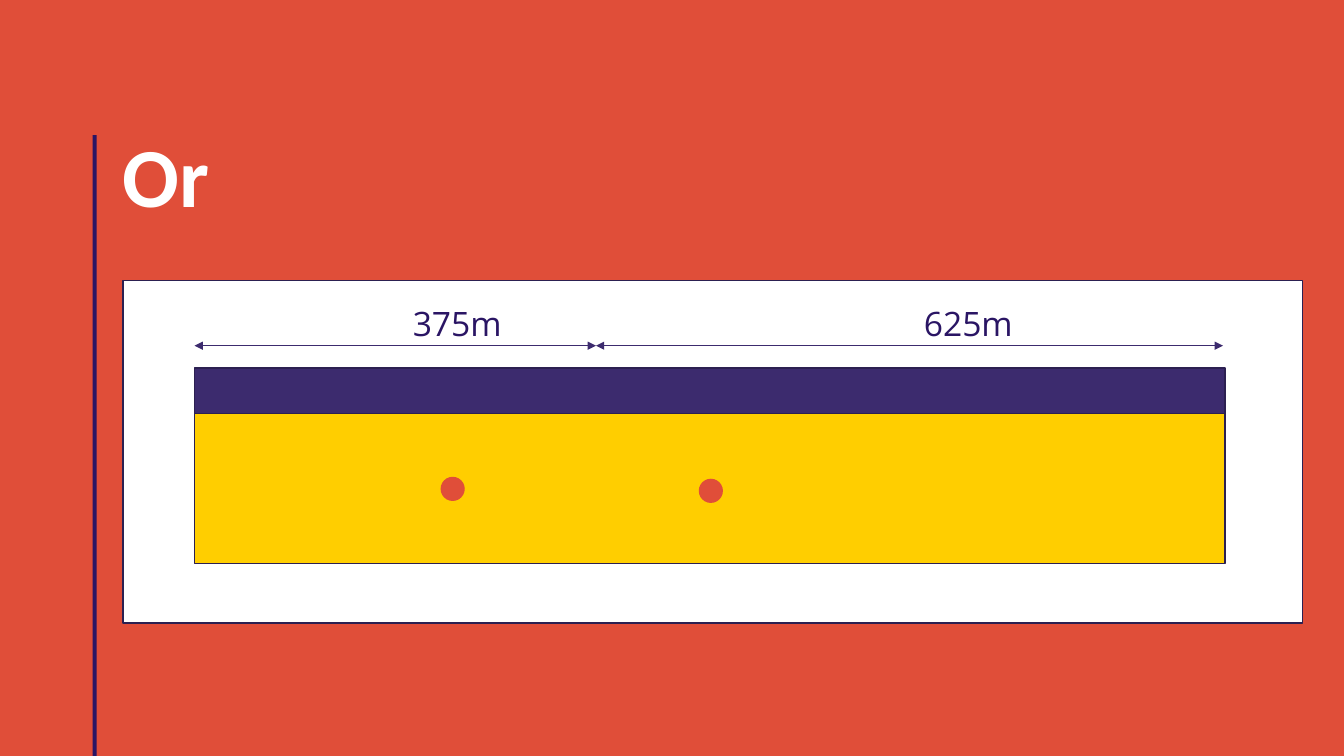
from lxml import etree
from pptx import Presentation
from pptx import util as u
from pptx.dml.color import RGBColor
from pptx.enum import shapes, text
from pptx.oxml.ns import qn

RED = RGBColor(0xE0, 0x4E, 0x39)
WHITE = RGBColor(0xFF, 0xFF, 0xFF)
NAVY = RGBColor(0x2A, 0x15, 0x64)
OUTLINE = RGBColor(0x2C, 0x20, 0x51)
PURPLE = RGBColor(0x3C, 0x2B, 0x6E)
YELLOW = RGBColor(0xFF, 0xCE, 0x00)

WIDTH, HEIGHT = u.Inches(13.33), u.Inches(7.5)
MARGIN, TOP = 9.15, 17.87
BEACH_LEFT, BEACH_WIDTH = 14.48, 76.67
SPLIT, ARROW_END, ARROW_Y = 44.34, 91, 45.73
DOT = (1.8, 3.2)

TITLE = ("Or", (MARGIN, TOP, 86.27, 17.07), "Calibri", 60, True, WHITE, text.PP_ALIGN.LEFT)
ACCENT = ((6.9, TOP, 0.3, 100 - TOP), NAVY)
PANELS = [
    ((MARGIN, 37.07, 87.77, 45.33), WHITE),
    ((BEACH_LEFT, 48.67, BEACH_WIDTH, 24.53), PURPLE),
    ((BEACH_LEFT, 54.67, BEACH_WIDTH, 19.87), YELLOW),
]
DOTS = [(51.99, 63.33), (32.78, 63.07)]
SPANS = [
    ("375m", 22.06, BEACH_LEFT, SPLIT),
    ("625m", 60.09, SPLIT, ARROW_END),
]


def place(*shares):
    return [round(share / 100 * side) for share, side in zip(shares, (WIDTH, HEIGHT) * 2)]


def add_block(s, kind, box, fill, outline=None):
    sp = s.shapes.add_shape(kind, *place(*box))
    sp.shadow.inherit = False
    sp.fill.solid()
    sp.fill.fore_color.rgb = fill
    if outline is None:
        sp.line.fill.background()
    else:
        sp.line.color.rgb = outline
        sp.line.width = u.Pt(1)


def add_label(s, words, box, font, size, bold, color, align):
    tf = s.shapes.add_textbox(*place(*box)).text_frame
    tf.word_wrap = True
    tf.margin_left = tf.margin_right = tf.margin_top = tf.margin_bottom = 0
    p = tf.paragraphs[0]
    p.alignment = align
    p.line_spacing = 0.9
    r = p.add_run()
    r.text = words
    r.font.name = font
    r.font.size = u.Pt(size)
    r.font.bold = bold
    r.font.color.rgb = color


def add_arrow(s, start, end):
    sp = s.shapes.add_connector(
        shapes.MSO_CONNECTOR.STRAIGHT, *place(start, ARROW_Y, end, ARROW_Y))
    sp.line.color.rgb = PURPLE
    sp.line.width = u.Pt(0.5)
    ln = sp.line._get_or_add_ln()
    for tip in ("a:headEnd", "a:tailEnd"):
        etree.SubElement(ln, qn(tip), type="triangle")
    etree.SubElement(ln.getparent(), qn("a:effectLst"))


def main():
    prs = Presentation()
    prs.slide_width, prs.slide_height = WIDTH, HEIGHT
    s = prs.slides.add_slide(prs.slide_layouts[6])
    s.background.fill.solid()
    s.background.fill.fore_color.rgb = RED
    rect, oval = shapes.MSO_SHAPE.RECTANGLE, shapes.MSO_SHAPE.OVAL
    add_block(s, rect, *ACCENT)
    add_label(s, *TITLE)
    for box, fill in PANELS:
        add_block(s, rect, box, fill, OUTLINE)
    for corner in DOTS:
        add_block(s, oval, corner + DOT, RED)
    for words, left, start, end in SPANS:
        add_arrow(s, start, end)
        add_label(s, words, (left, 40.67, 23.93, 7.73), "Open Sans", 24, False,
                  NAVY, text.PP_ALIGN.CENTER)
    prs.save("out.pptx")


if __name__ == "__main__":
    main()
